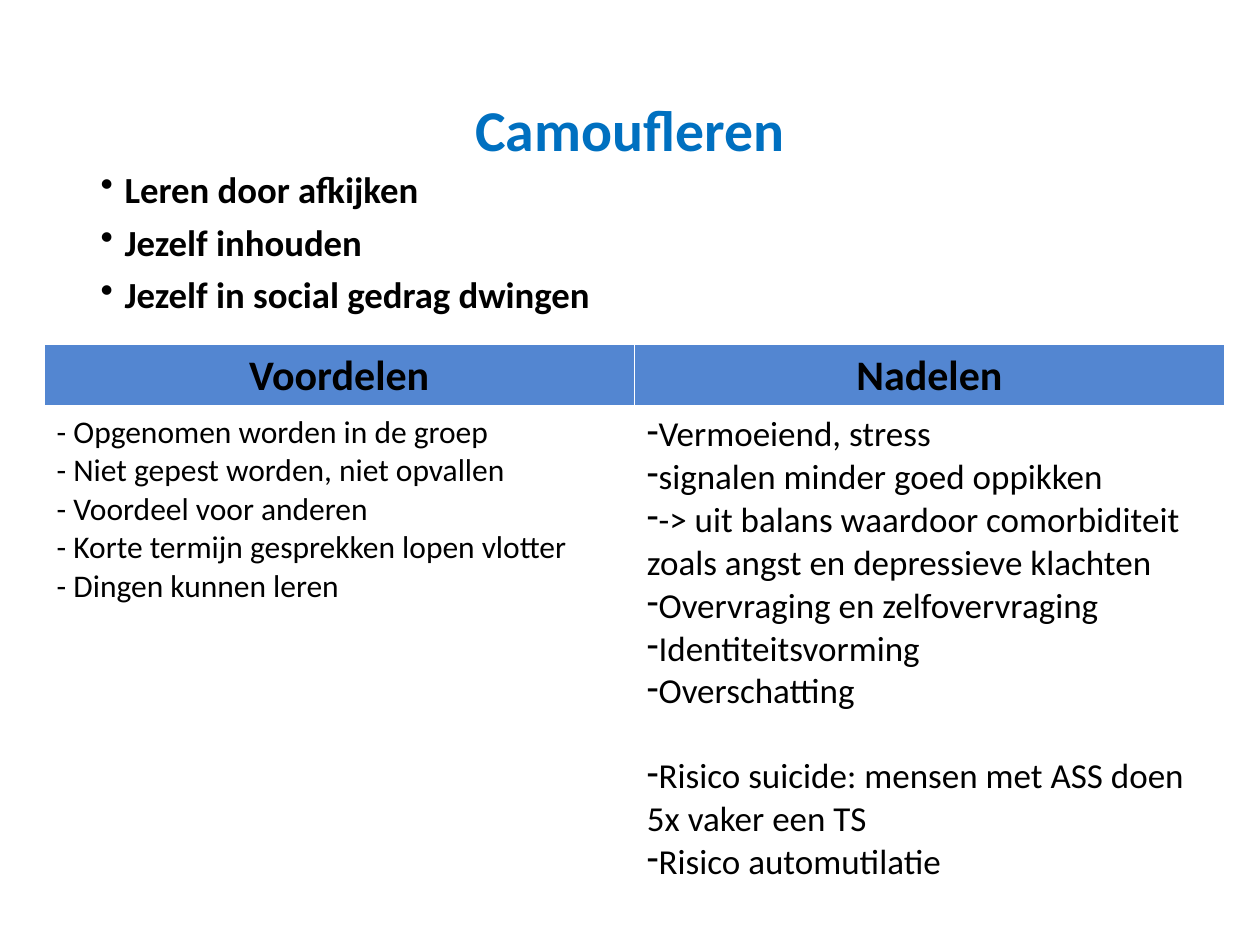
from lxml import etree
from pptx import Presentation
from pptx.dml.color import RGBColor
from pptx.enum.text import MSO_ANCHOR, PP_ALIGN
from pptx.oxml.ns import qn
from pptx.util import Inches, Pt

CENTER, LEFT = PP_ALIGN.CENTER, PP_ALIGN.LEFT
MIDDLE = MSO_ANCHOR.MIDDLE
TITLE_ONLY = 5
COLORS = {"title": "0070C0", "text": "000000", "header": "5386D1", "white": "FFFFFF"}

STRATEGIES = ["Leren door afkijken", "Jezelf inhouden", "Jezelf in social gedrag dwingen"]
ADVANTAGES = [
    "- Opgenomen worden in de groep",
    "- Niet gepest worden, niet opvallen",
    "- Voordeel voor anderen",
    "- Korte termijn gesprekken lopen vlotter",
    "- Dingen kunnen leren",
]
DISADVANTAGES = [
    "Vermoeiend, stress",
    "signalen minder goed oppikken",
    "-> uit balans waardoor comorbiditeit zoals angst en depressieve klachten",
    "Overvraging en zelfovervraging",
    "Identiteitsvorming",
    "Overschatting",
]
RISKS = ["Risico suicide: mensen met ASS doen 5x vaker een TS", "Risico automutilatie"]


class SlideBuilder:
    """Holds the style and the current slide; boxes are shares of the slide's size."""

    font_name = "Calibri"

    def __init__(self, presentation):
        self.width, self.height = presentation.slide_width, presentation.slide_height
        self.slide = presentation.slides.add_slide(presentation.slide_layouts[TITLE_ONLY])

    def box(self, left, top, width, height):
        return (int(left * self.width), int(top * self.height),
                int(width * self.width), int(height * self.height))

    def fill_text(self, frame, lines, size, color="text", bold=False, align=LEFT,
                  bullet=None, indent=0, line_spacing=None, gap=0):
        frame.word_wrap = True
        frame.text = "\n".join(lines)
        for number, paragraph in enumerate(frame.paragraphs):
            if bullet:
                properties = paragraph._p.get_or_add_pPr()
                properties.set("marL", str(Inches(indent)))
                properties.set("indent", str(-Inches(indent)))
                etree.SubElement(properties, qn("a:buChar"), char=bullet)
            paragraph.alignment = align
            if line_spacing:
                paragraph.line_spacing = line_spacing
            if number and gap:
                paragraph.space_before = Pt(gap)
            font = paragraph.font
            font.name, font.size, font.bold = self.font_name, Pt(size), bold
            font.color.rgb = RGBColor.from_string(COLORS[color])

    def title(self, text, box):
        shape = self.slide.shapes.title
        shape.left, shape.top, shape.width, shape.height = self.box(*box)
        shape.text_frame.vertical_anchor = MIDDLE
        self.fill_text(shape.text_frame, [text], 33, "title", True, CENTER, line_spacing=0.9)

    def bullets(self, lines, box):
        shape = self.slide.shapes.add_textbox(*self.box(*box))
        self.fill_text(shape.text_frame, lines, 21, bold=True, bullet="•",
                       indent=0.19, line_spacing=0.9, gap=7.5)

    def borders(self, cell, bottom):
        properties = cell._tc.get_or_add_tcPr()
        for side, points in (("L", 1), ("R", 1), ("T", 1), ("B", bottom)):
            line = etree.SubElement(properties, qn(f"a:ln{side}"), w=str(Pt(points)))
            fill = etree.SubElement(line, qn("a:solidFill"))
            etree.SubElement(fill, qn("a:srgbClr"), val=COLORS["white"])

    def table(self, headers, box, header_share):
        frame = self.slide.shapes.add_table(2, len(headers), *self.box(*box))
        table = frame.table
        header_height = int(frame.height * header_share)
        table.rows[0].height = header_height
        table.rows[1].height = frame.height - header_height
        for column, header in enumerate(headers):
            head, body = table.cell(0, column), table.cell(1, column)
            self.borders(head, bottom=3)
            self.borders(body, bottom=1)
            head.fill.solid()
            head.fill.fore_color.rgb = RGBColor.from_string(COLORS["header"])
            body.fill.background()
            self.fill_text(head.text_frame, [header], 24, bold=True, align=CENTER)
        return table


def main():
    presentation = Presentation()
    presentation.slide_width, presentation.slide_height = Inches(10), Inches(7.5)
    builder = SlideBuilder(presentation)

    # Title and strategies
    builder.title("Camoufleren", (0.07, 0.05, 0.86, 0.18))
    builder.bullets(STRATEGIES, (0.07, 0.175, 0.86, 0.18))

    # Advantages against disadvantages
    table = builder.table(["Voordelen", "Nadelen"], (0.035, 0.364, 0.937, 0.58), 0.11)
    builder.fill_text(table.cell(1, 0).text_frame, ADVANTAGES, 18)
    disadvantages = table.cell(1, 1).text_frame
    builder.fill_text(disadvantages, DISADVANTAGES + RISKS, 20, bullet="-")
    disadvantages.paragraphs[len(DISADVANTAGES)].space_before = Pt(24)

    presentation.save("out.pptx")


if __name__ == "__main__":
    main()
